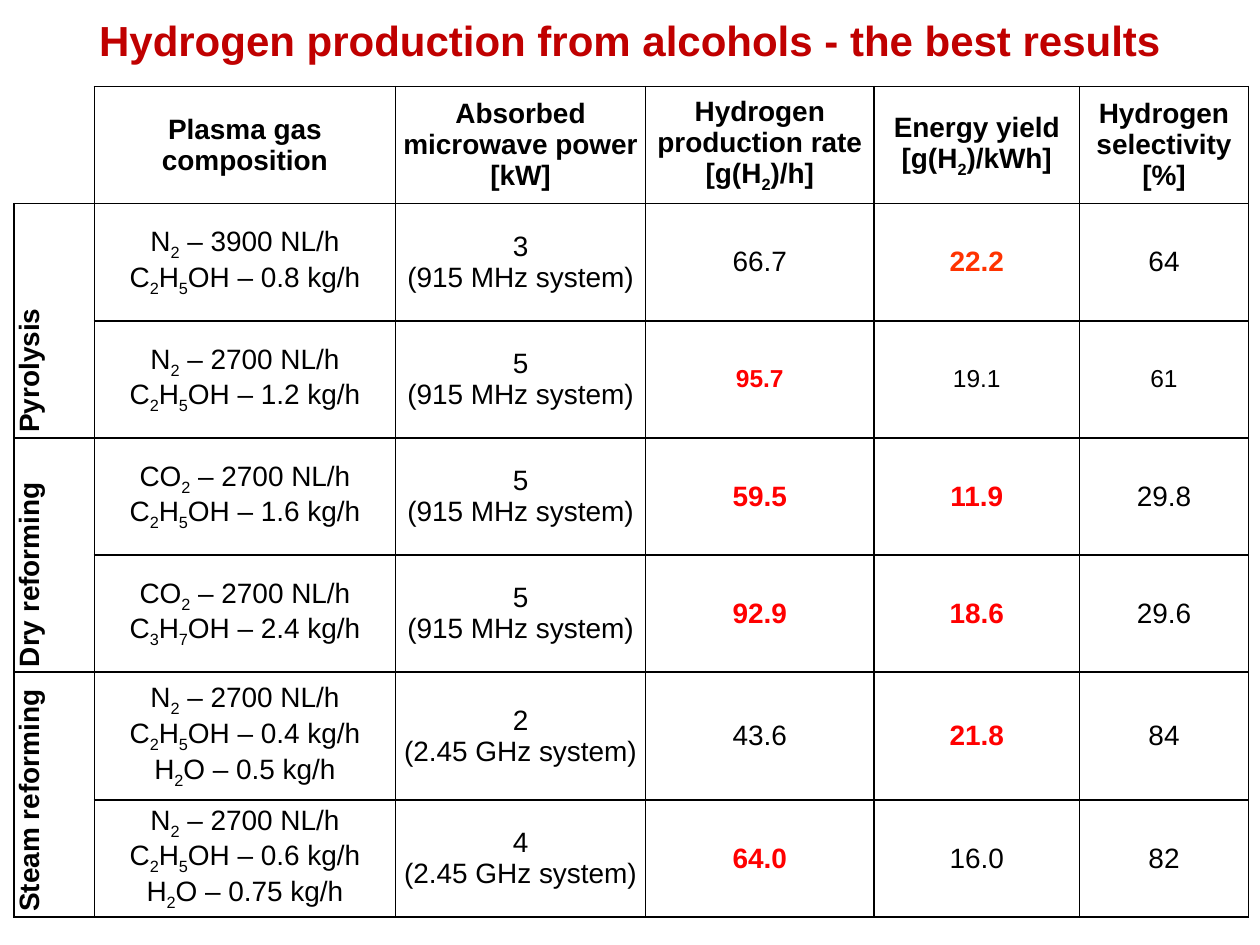
from dataclasses import dataclass

import pptx
import pptx.dml.color
import pptx.enum.text
import pptx.oxml
import pptx.oxml.ns
import pptx.util

Pt = pptx.util.Pt
RGB = pptx.dml.color.RGBColor
ALIGN = pptx.enum.text.PP_ALIGN
MIDDLE = pptx.enum.text.MSO_ANCHOR.MIDDLE


@dataclass(frozen=True)
class Theme:
    face: str = "Arial"
    title_size: int = 24
    body_size: int = 16
    small_size: int = 14
    ink: str = "000000"
    title: str = "C00000"
    best: str = "FF0000"
    best_yield: str = "FF3300"
    rule: float = 1


THEME = Theme()

TITLE = "Hydrogen production from alcohols - the best results"
COLUMN_WIDTHS = [46, 172, 143, 130.5, 117.5, 96.5]
ROW_HEIGHTS = [67, 67, 67, 67, 67, 73, 67]

# An underscore lowers the character after it; a leading * marks a best result.
HEADINGS = [
    "Plasma gas composition",
    "Absorbed microwave power\n[kW]",
    "Hydrogen production rate\n[g(H_2)/h]",
    "Energy yield\n[g(H_2)/kWh]",
    "Hydrogen\nselectivity\n[%]",
]
PROCESSES = ["Pyrolysis", "Dry reforming", "Steam reforming"]
LARGE_SYSTEM = "(915 MHz system)"
SMALL_SYSTEM = "(2.45 GHz system)"
RESULTS = [
    ["N_2 – 3900 NL/h\nC_2H_5OH – 0.8 kg/h", f"3\n{LARGE_SYSTEM}", "66.7", "*22.2", "64"],
    ["N_2 – 2700 NL/h\nC_2H_5OH – 1.2 kg/h", f"5\n{LARGE_SYSTEM}", "*95.7", "19.1", "61"],
    ["CO_2 – 2700 NL/h\nC_2H_5OH – 1.6 kg/h", f"5\n{LARGE_SYSTEM}", "*59.5", "*11.9", "29.8"],
    ["CO_2 – 2700 NL/h\nC_3H_7OH – 2.4 kg/h", f"5\n{LARGE_SYSTEM}", "*92.9", "*18.6", "29.6"],
    ["N_2 – 2700 NL/h\nC_2H_5OH – 0.4 kg/h\nH_2O – 0.5 kg/h", f"2\n{SMALL_SYSTEM}",
     "43.6", "*21.8", "84"],
    ["N_2 – 2700 NL/h\nC_2H_5OH – 0.6 kg/h\nH_2O – 0.75 kg/h", f"4\n{SMALL_SYSTEM}",
     "*64.0", "16.0", "82"],
]


def write_lines(frame, text, size=THEME.body_size, color=THEME.ink, bold=False,
                align=ALIGN.CENTER):
    """Write one paragraph a line, lowering each character that follows an underscore."""
    for index, line in enumerate(text.split("\n")):
        paragraph = frame.add_paragraph() if index else frame.paragraphs[0]
        paragraph.alignment = align
        paragraph.font.name = THEME.face
        paragraph.font.size = Pt(size)
        paragraph.font.bold = bold
        paragraph.font.color.rgb = RGB.from_string(color)
        plain, *lowered = line.split("_")
        paragraph.add_run().text = plain
        for part in lowered:
            subscript = paragraph.add_run()
            subscript.text = part[0]
            subscript._r.get_or_add_rPr().set("baseline", "-25000")
            paragraph.add_run().text = part[1:]


def rule_cell(cell, sides="LRTB"):
    """Draw the named sides of a cell and leave the others and the fill empty."""
    properties = cell._tc.get_or_add_tcPr()
    for side in "LRTB":
        paint = (f'<a:solidFill><a:srgbClr val="{THEME.ink}"/></a:solidFill>'
                 if side in sides else "<a:noFill/>")
        properties.append(pptx.oxml.parse_xml(
            f'<a:ln{side} {pptx.oxml.ns.nsdecls("a")} w="{Pt(THEME.rule)}">{paint}</a:ln{side}>'))
    cell.fill.background()
    cell.vertical_anchor = MIDDLE
    cell.margin_left = cell.margin_right = Pt(3)
    cell.margin_top = cell.margin_bottom = 0


def add_title(slide, left, top, width, height):
    box = slide.shapes.add_textbox(Pt(left), Pt(top), Pt(width), Pt(height))
    box.text_frame.word_wrap = True
    box.text_frame.vertical_anchor = MIDDLE
    write_lines(box.text_frame, TITLE, THEME.title_size, THEME.title, True)


def add_process_labels(table):
    for index, process in enumerate(PROCESSES):
        first_row = 1 + 2 * index
        label = table.cell(first_row, 0)
        label.merge(table.cell(first_row + 1, 0))
        label._tc.get_or_add_tcPr().set("vert", "vert270")
        write_lines(label.text_frame, process, bold=True, align=ALIGN.JUSTIFY)


def add_results(table):
    for row, values in enumerate(RESULTS, 1):
        for column, value in enumerate(values, 1):
            best = value.startswith("*")
            size = THEME.small_size if row == 2 and column >= 3 else THEME.body_size
            best_color = THEME.best_yield if (row, column) == (1, 4) else THEME.best
            write_lines(table.cell(row, column).text_frame, value.lstrip("*"), size,
                        best_color if best else THEME.ink, best)


def add_results_table(slide, left, top, width, height):
    table = slide.shapes.add_table(len(ROW_HEIGHTS), len(COLUMN_WIDTHS), Pt(left), Pt(top),
                                   Pt(width), Pt(height)).table
    table.first_row = table.horz_banding = False
    for column, share in zip(table.columns, COLUMN_WIDTHS):
        column.width = Pt(width * share / sum(COLUMN_WIDTHS))
    for row, share in zip(table.rows, ROW_HEIGHTS):
        row.height = Pt(height * share / sum(ROW_HEIGHTS))
    for index, cell in enumerate(table.iter_cells()):
        rule_cell(cell, "LRTB" if index else "RB")
    for column, heading in enumerate(HEADINGS, 1):
        write_lines(table.cell(0, column).text_frame, heading, bold=True)
    add_process_labels(table)
    add_results(table)


def main():
    presentation = pptx.Presentation()
    presentation.slide_width, presentation.slide_height = Pt(720), Pt(540)
    slide = presentation.slides.add_slide(presentation.slide_layouts[6])
    add_results_table(slide, 8, 49.5, 705.5, 474.5)
    add_title(slide, 0, 4.5, 720, 36.5)
    presentation.save("out.pptx")


if __name__ == "__main__":
    main()
